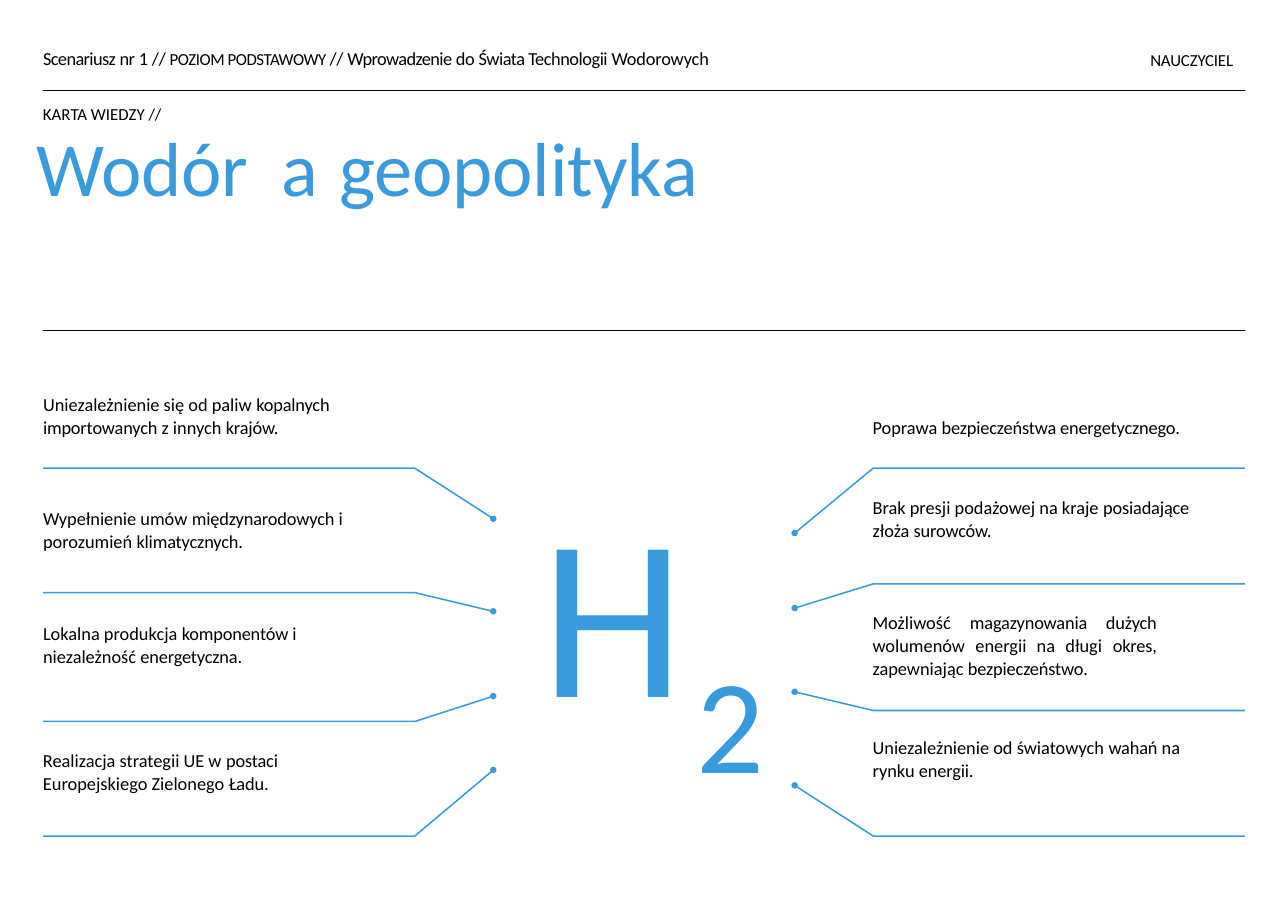
from itertools import cycle

from lxml.etree import SubElement
from pptx import Presentation
from pptx.dml.color import RGBColor
from pptx.enum.shapes import MSO_CONNECTOR, MSO_SHAPE
from pptx.enum.text import MSO_AUTO_SIZE, PP_ALIGN
from pptx.oxml.ns import qn
from pptx.util import Inches, Pt

BLACK = RGBColor(0x00, 0x00, 0x00)
BLUE = RGBColor(0x3A, 0x9B, 0xDC)
FONT = "Calibri"

# The grid has 100 columns and 100 rows; the right side mirrors the left.
GRID = 100
MARGIN = 3.34
BEND = 32.2
TIP = 38.3
DOT = 0.5
INDENT = 0.09
NOTE_LEFT = {"left": 3.25, "right": 67.66}

# side, top, width, height, rail row, tip row, spans (normal and tight in turn)
CALLOUTS = [
    ("left", 42.93, 24.81, 5.32, 51.39, 56.95,
     ["Uniezależnienie się od paliw ", "kopalnych importowanych ", "z innych ", "krajów."]),
    ("left", 55.5, 24.98, 5.32, 65.05, 67.11,
     ["Wypełnienie umów ", "międzynarodowych ", "i porozumień ", "klimatycznych."]),
    ("left", 68.08, 21.47, 5.32, 79.2, 76.42,
     ["Lokalna produkcja ", "komponentów ", "i niezależność ", "energetyczna."]),
    ("left", 81.98, 20.53, 5.32, 91.78, 84.52,
     ["Realizacja strategii UE w ", "postaci ", "Europejskiego Zielonego ", "Ładu."]),
    ("right", 45.47, 26.95, 2.78, 51.39, 58.52,
     ["Poprawa ", "bezpieczeństwa energetycznego."]),
    ("right", 54.29, 27.29, 5.32, 64.09, 66.75,
     ["Brak presji podażowej na kraje ", "posiadające ", "złoża ", "surowców."]),
    ("right", 66.87, 22.16, 7.74, 77.99, 75.94,
     ["Możliwość ", "magazynowania dużych ", "wolumenów energii na długi ", "okres, ",
      "zapewniając ", "bezpieczeństwo."]),
    ("right", 80.65, 24.38, 5.32, 91.78, 86.22,
     ["Uniezależnienie od światowych ", "wahań ", "na rynku ", "energii."]),
]


class KnowledgeCard:
    def __init__(self, deck):
        self.page = deck.slides.add_slide(deck.slide_layouts[6])
        self.column = deck.slide_width / GRID
        self.row = deck.slide_height / GRID

    def across(self, columns):
        return round(columns * self.column)

    def down(self, rows):
        return round(rows * self.row)

    def box(self, left, top, width, height):
        """Add an empty text box and return its text frame."""
        frame = self.page.shapes.add_textbox(
            self.across(left), self.down(top), self.across(width), self.down(height)
        ).text_frame
        frame.word_wrap = True
        frame.auto_size = MSO_AUTO_SIZE.SHAPE_TO_FIT_TEXT
        frame.margin_left = frame.margin_right = frame.margin_bottom = 0
        frame.margin_top = Inches(0.01)
        return frame

    def add_spans(self, para, spans, color=BLACK, before=1, leading=None,
                  indent=INDENT, tabs=()):
        """Fill a paragraph with spans of (text, size, letter spacing in points)."""
        para.space_before = Pt(before)
        if leading:
            para.line_spacing = leading
        properties = para._p.get_or_add_pPr()
        properties.set("marL", str(self.across(indent)))
        if tabs:
            stops = SubElement(properties, qn("a:tabLst"))
            for stop in tabs:
                SubElement(stops, qn("a:tab"), pos=str(self.across(stop)), algn="l")
        for text, size, spacing in spans:
            span = para.add_run()
            span.text = text
            span.font.name = FONT
            span.font.size = Pt(size)
            span.font.color.rgb = color
            span._r.get_or_add_rPr().set("spc", str(round(spacing * 100)))

    def rule(self, row):
        line = self.page.shapes.add_connector(
            MSO_CONNECTOR.STRAIGHT, self.across(MARGIN), self.down(row),
            self.across(GRID - MARGIN), self.down(row))
        line.line.color.rgb = BLACK
        line.line.width = Pt(0.5)
        SubElement(line._element.spPr, qn("a:effectLst"))

    def pointer(self, side, rail, tip):
        """Draw a bent line from the margin that ends in a dot near the symbol."""
        columns = [MARGIN, BEND, TIP]
        if side == "right":
            columns = [GRID - column for column in columns]
        points = [(self.across(column), self.down(row))
                  for column, row in zip(columns, (rail, rail, tip))]
        group = self.page.shapes.add_group_shape()
        builder = group.shapes.build_freeform(*points[0])
        builder.add_line_segments(points[1:], close=False)
        line = builder.convert_to_shape()
        line.fill.background()
        line.line.color.rgb = BLUE
        line.line.width = Pt(1)
        line.shadow.inherit = False

        size = self.across(DOT)
        x, y = points[-1]
        dot = group.shapes.add_shape(
            MSO_SHAPE.OVAL, x - size // 2, y - size // 2, size, size)
        dot.fill.solid()
        dot.fill.fore_color.rgb = BLUE
        dot.line.fill.background()
        dot.shadow.inherit = False

    def note(self, side, top, width, height, texts):
        para = self.box(NOTE_LEFT[side], top, width, height).paragraphs[0]
        if texts[0].startswith("Możliwość"):
            para.alignment = PP_ALIGN.JUSTIFY
        spans = [(text, 12, spacing) for text, spacing in zip(texts, cycle((0, -0.1)))]
        self.add_spans(para, spans, before=0.4, leading=1.04)

    def header(self):
        role = self.box(89.22, 5.32, 7.53, 2.54)
        self.add_spans(role.paragraphs[0], [("NAUCZYCIEL", 11, -0.1)])
        scenario = self.box(3.25, 5.08, 56.8, 2.78)
        self.add_spans(scenario.paragraphs[0], [
            ("Scenariusz", 12, -0.4), (" nr ", 12, -0.3), ("1", 12, 0),
            (" // ", 12, -0.2), ("POZIOM PODSTAWOWY ", 11, -0.3), ("// ", 12, -0.2),
            ("Wprowadzenie ", 12, -0.4), ("do ", 12, -0.2),
            ("Świata Technologii ", 12, -0.3), ("Wodorowych", 12, -0.1),
        ])

    def title(self):
        frame = self.box(2.74, 11.61, 53.98, 11.85)
        self.add_spans(frame.paragraphs[0],
                       [("KARTA WIEDZY ", 11, 0), ("//", 11, -0.2)],
                       leading=Pt(10.8), indent=0.6)
        self.add_spans(frame.add_paragraph(),
                       [("Wodór\t", 50, -0.1), ("a\t", 50, -0.5),
                        ("geopolityka", 50, -0.1)],
                       color=BLUE, before=0, leading=Pt(57.6), tabs=(18.99, 23.52))

    def symbol(self):
        letter = self.box(41.92, 51.27, 12.32, 30.59)
        self.add_spans(letter.paragraphs[0], [("H", 150, -0.5)], color=BLUE)
        index = self.box(53.98, 70.13, 5.9, 18.02)
        self.add_spans(index.paragraphs[0], [("2", 87.5, -0.5)], color=BLUE, before=0.9)


def main():
    deck = Presentation()
    deck.slide_width, deck.slide_height = Inches(11.69), Inches(8.27)
    card = KnowledgeCard(deck)
    card.header()
    for row in (9.92, 36.28):
        card.rule(row)
    card.title()
    card.symbol()
    for side, top, width, height, rail, tip, texts in CALLOUTS:
        card.note(side, top, width, height, texts)
        card.pointer(side, rail, tip)
    deck.save("out.pptx")


if __name__ == "__main__":
    main()
